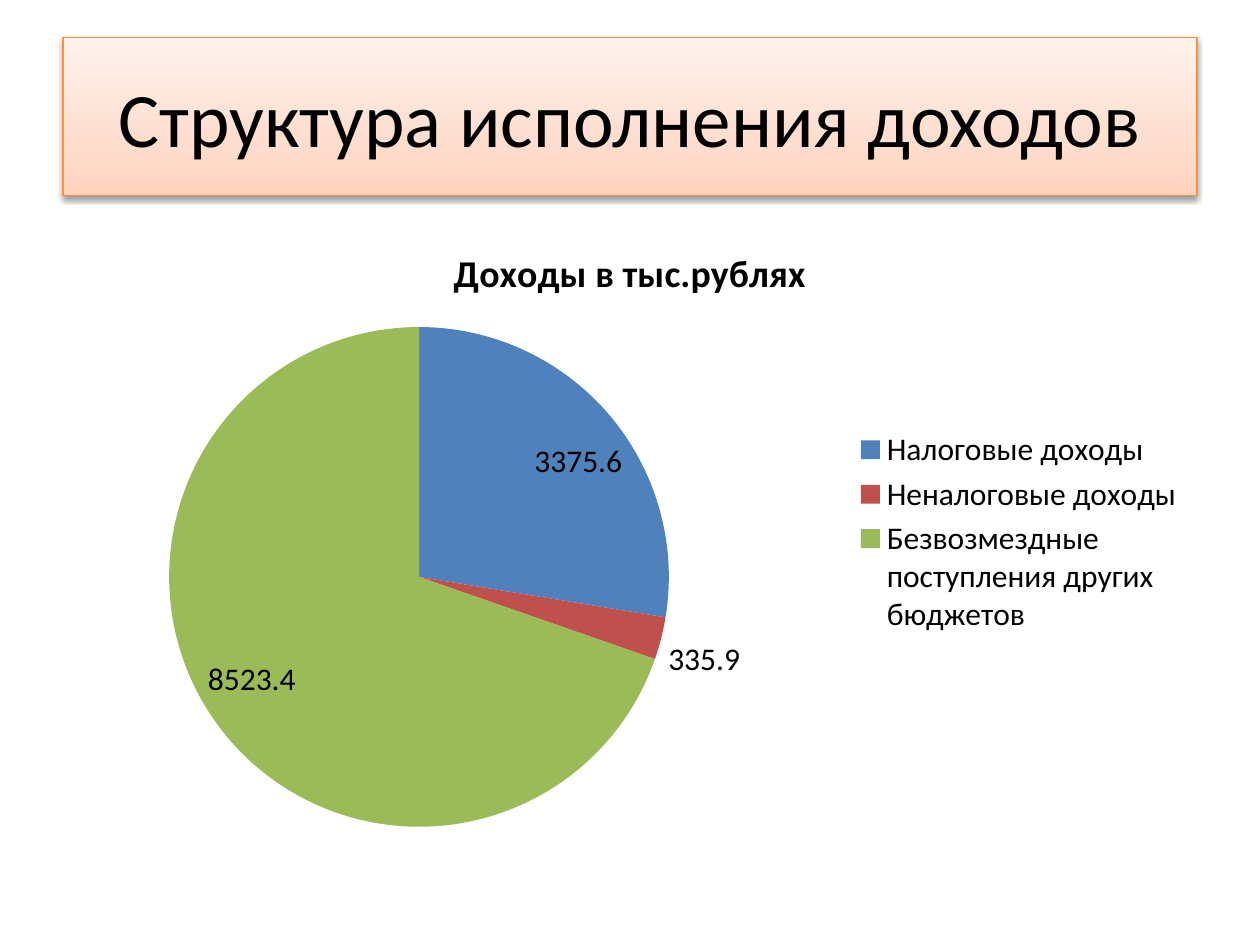
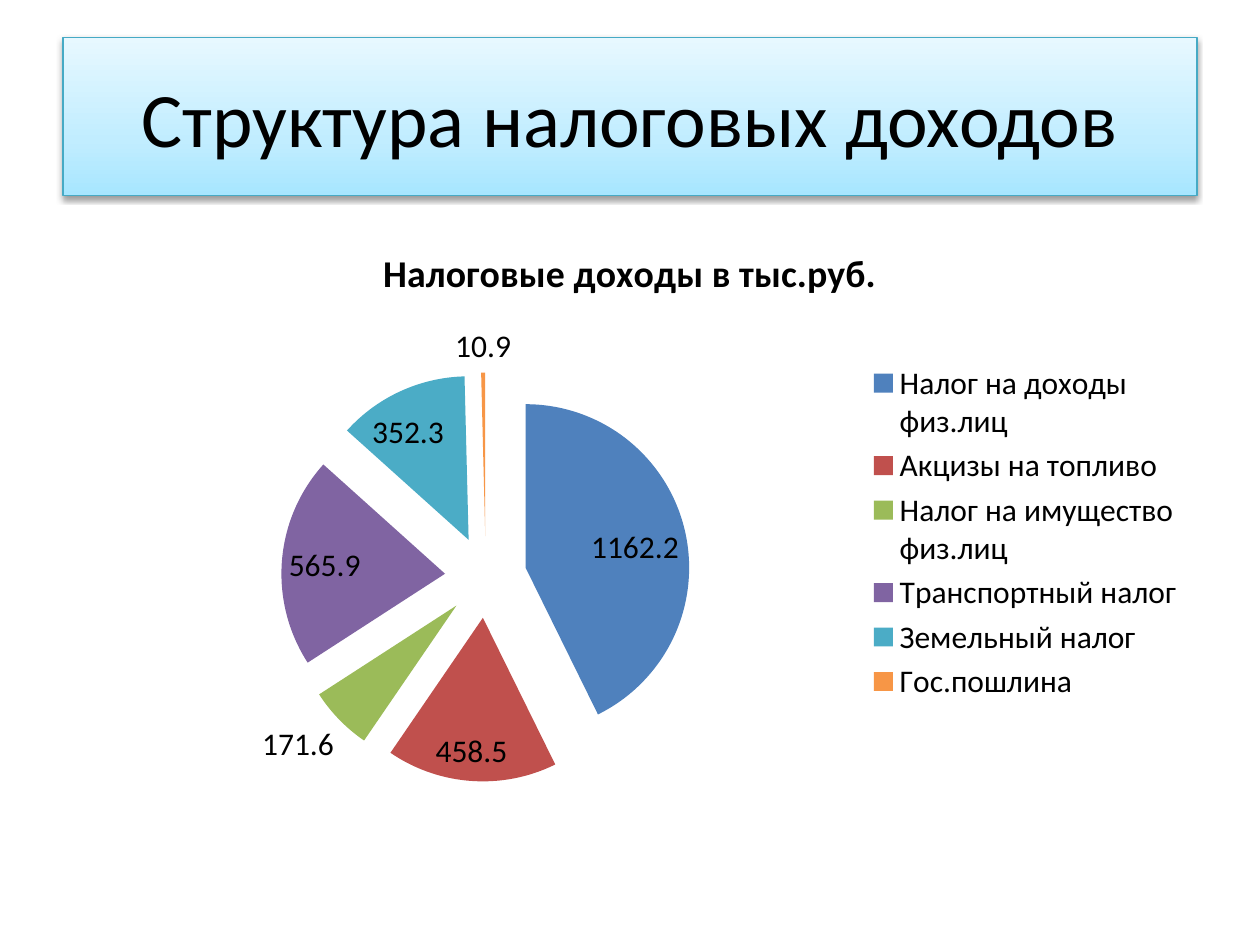
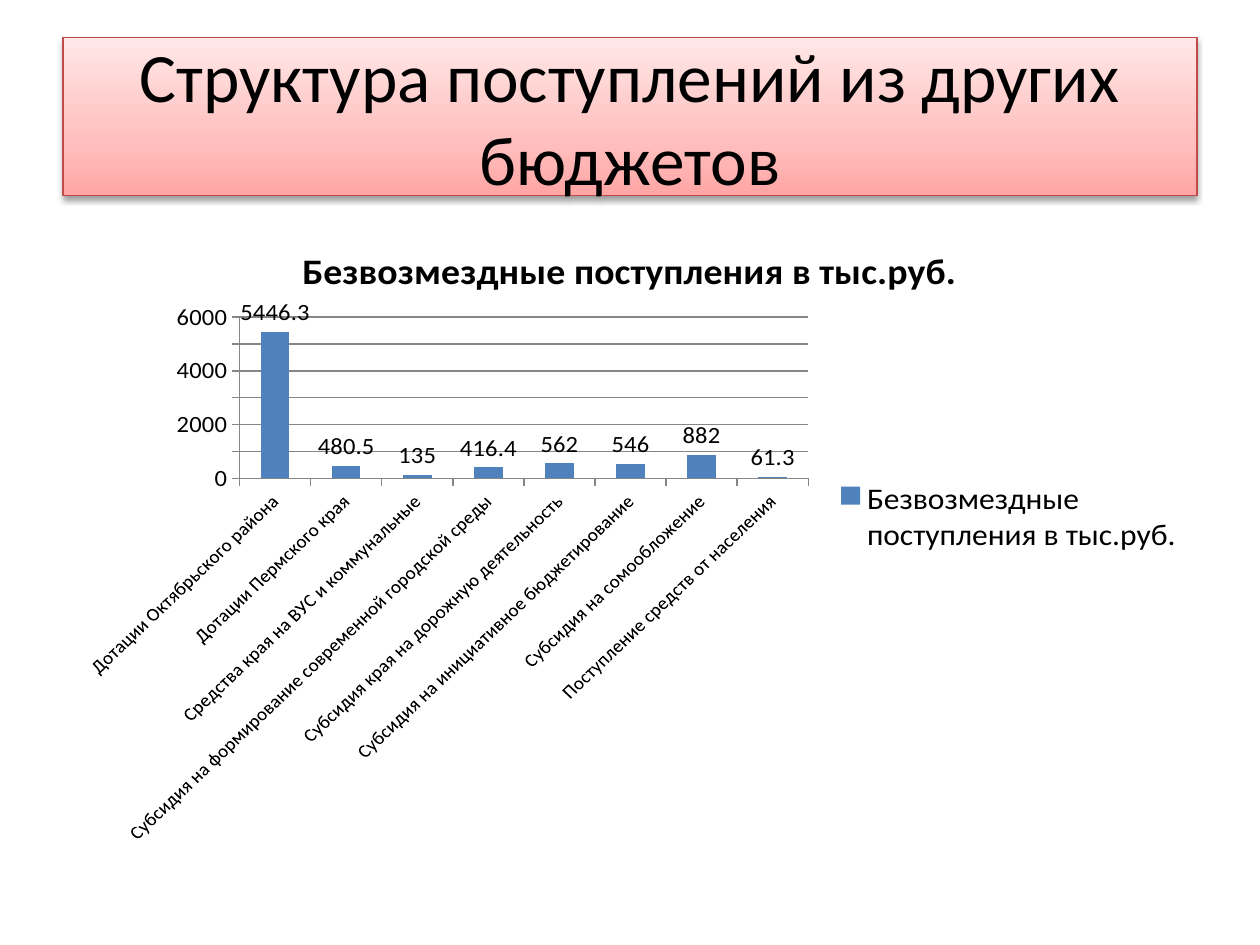
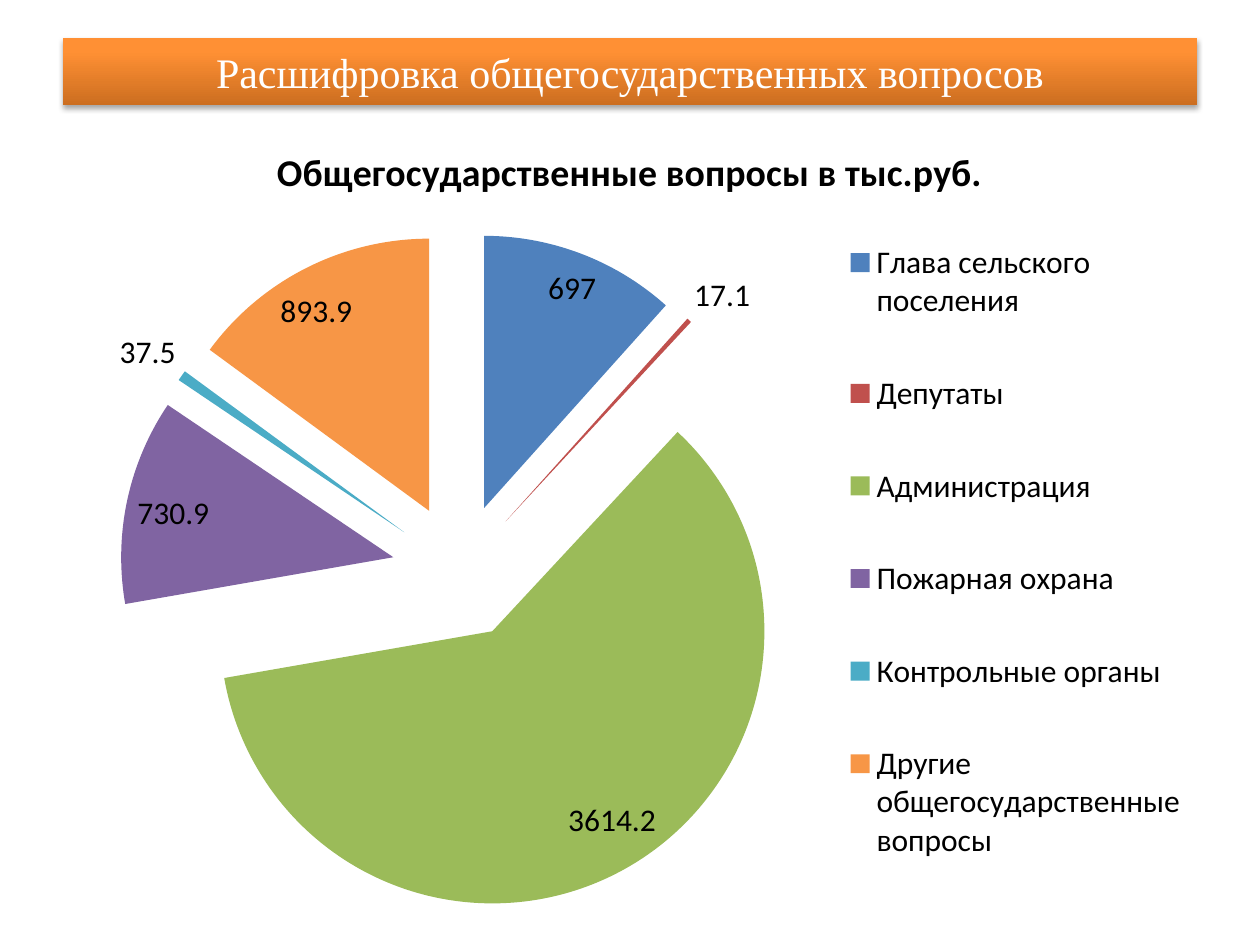
import lxml.etree
import pptx
import pptx.chart.data
import pptx.dml.color
import pptx.enum.chart
import pptx.enum.shapes
import pptx.enum.text
import pptx.oxml
import pptx.oxml.ns
import pptx.util
from copy import deepcopy

Pt = pptx.util.Pt
qn = pptx.oxml.ns.qn
LEFT, WIDTH = 36, 648
HUES = ["4F81BD", "C0504D", "9BBB59", "8064A2", "4BACC6", "F79646"]
BLACK, WHITE, GREY = "000000", "FFFFFF", "868686"


def color(code):
    return pptx.dml.color.RGBColor.from_string(code)


class Deck:
    """Holds the shared style and the current slide."""

    def __init__(self):
        self.show = pptx.Presentation()
        self.show.slide_width, self.show.slide_height = Pt(720), Pt(540)
        self.face = "Calibri"
        self.slide = None

    def page(self):
        self.slide = self.show.slides.add_slide(self.show.slide_layouts[6])

    def font(self, font, size, ink=BLACK, face=None, bold=None):
        font.name = face or self.face
        font.size = Pt(size)
        font.bold = bold
        font.color.rgb = color(ink)

    def blend(self, shape, stops):
        shape.fill.gradient()
        shape.fill.gradient_angle = 90
        group = shape._element.spPr.find(".//" + qn("a:gsLst"))
        group.append(deepcopy(group[-1]))
        for stop, (place, code) in zip(shape.fill.gradient_stops, stops):
            stop.position = place / 100
            stop.color.rgb = color(code)

    def shade(self, shape, alpha, gap):
        shape.shadow.inherit = False
        effects = shape._element.spPr.find(qn("a:effectLst"))
        drop = lxml.etree.SubElement(
            effects, qn("a:outerShdw"), blurRad=str(int(Pt(3.1))),
            dist=str(int(Pt(gap))), dir="5400000", rotWithShape="0")
        ink = lxml.etree.SubElement(drop, qn("a:srgbClr"), val=BLACK)
        lxml.etree.SubElement(ink, qn("a:alpha"), val=str(alpha * 1000))

    def band(self, text, stops, edge=None, size=44, high=90, ink=BLACK,
             face=None, alpha=38, gap=1.6):
        shape = self.slide.shapes.add_shape(
            pptx.enum.shapes.MSO_SHAPE.RECTANGLE,
            Pt(LEFT), Pt(21.6), Pt(WIDTH), Pt(high))
        self.blend(shape, stops)
        self.shade(shape, alpha, gap)
        if edge:
            shape.line.color.rgb = color(edge)
            shape.line.width = Pt(0.75)
        else:
            shape.line.fill.background()
        frame = shape.text_frame
        frame.word_wrap = True
        frame.vertical_anchor = pptx.enum.text.MSO_ANCHOR.MIDDLE
        para = frame.paragraphs[0]
        para.text = text
        para.alignment = pptx.enum.text.PP_ALIGN.CENTER
        self.font(para.font, size, ink, face)

    def chart(self, kind, title, rows, top, high):
        data = pptx.chart.data.CategoryChartData()
        data.categories = [name for name, _ in rows]
        data.add_series(title, [value for _, value in rows])
        chart = self.slide.shapes.add_chart(
            kind, Pt(LEFT), Pt(top), Pt(WIDTH), Pt(high), data).chart
        self.font(chart.font, 18)
        chart.has_title = True
        para = chart.chart_title.text_frame.paragraphs[0]
        para.text = title
        self.font(para.font, 21.6, bold=True)
        chart.chart_title.include_in_layout = False
        chart.has_legend = True
        chart.legend.position = pptx.enum.chart.XL_LEGEND_POSITION.RIGHT
        chart.legend.include_in_layout = False
        return chart

    def labels(self, plot, size, spot):
        plot.has_data_labels = True
        marks = plot.data_labels
        marks.show_value = True
        marks.position = spot
        self.font(marks.font, size)

    def settle(self, part, index, box, inner=False):
        for old in part.findall(qn("c:layout")):
            part.remove(old)
        layout = lxml.etree.Element(qn("c:layout"))
        manual = lxml.etree.SubElement(layout, qn("c:manualLayout"))
        pairs = [("layoutTarget", "inner")] if inner else []
        pairs += [("xMode", "edge"), ("yMode", "edge")]
        pairs += zip("xywh", map(str, box))
        for tag, value in pairs:
            lxml.etree.SubElement(manual, qn("c:" + tag), val=value)
        part.insert(index, layout)

    def pie(self, title, rows, top=126, high=356.4, burst=0,
            area=None, key=None):
        chart = self.chart(pptx.enum.chart.XL_CHART_TYPE.PIE,
                           title, rows, top, high)
        plot = chart.plots[0]
        plot.vary_by_categories = True
        self.labels(plot, 18, pptx.enum.chart.XL_LABEL_POSITION.BEST_FIT)
        series = plot.series[0]
        if burst:
            apart = lxml.etree.Element(qn("c:explosion"), val=str(burst))
            series._element.get_or_add_spPr().addnext(apart)
        for i, hue in enumerate(HUES[:len(rows)]):
            fill = series.points[i].format.fill
            fill.solid()
            fill.fore_color.rgb = color(hue)
        if area:
            self.settle(plot._element.getparent(), 0, area, True)
        if key:
            self.settle(chart.legend._element, 1, key)

    def bars(self, title, rows, top=126, high=356.4):
        chart = self.chart(pptx.enum.chart.XL_CHART_TYPE.COLUMN_CLUSTERED,
                           title, rows, top, high)
        plot = chart.plots[0]
        plot.vary_by_categories = False
        plot.gap_width = 150
        self.labels(plot, 14, pptx.enum.chart.XL_LABEL_POSITION.OUTSIDE_END)
        fill = plot.series[0].format.fill
        fill.solid()
        fill.fore_color.rgb = color(HUES[0])
        values = chart.value_axis
        values.has_major_gridlines = True
        for axis, size in ((chart.category_axis, 11), (values, 14)):
            self.font(axis.tick_labels.font, size)
            axis.major_tick_mark = pptx.enum.chart.XL_TICK_MARK.OUTSIDE
        for part in (chart.category_axis, values, values.major_gridlines):
            part.format.line.color.rgb = color(GREY)
            part.format.line.width = Pt(0.75)


def main():
    deck = Deck()

    deck.page()
    deck.band("Структура исполнения доходов",
              [(0, "FFD2BD"), (35, "FFDED0"), (100, "FFF2ED")], "F69240")
    deck.pie("Доходы в тыс.рублях", [
        ("Налоговые доходы", 3375.6),
        ("Неналоговые доходы", 335.9),
        ("Безвозмездные поступления других бюджетов", 8523.4)])

    deck.page()
    deck.band("Структура налоговых доходов",
              [(0, "A7E6FF"), (35, "C1EDFF"), (100, "E7F8FF")], "46AAC5")
    deck.pie("Налоговые доходы в тыс.руб.", [
        ("Налог на доходы физ.лиц", 1162.2),
        ("Акцизы на топливо", 458.5),
        ("Налог на имущество физ.лиц", 171.6),
        ("Транспортный налог", 565.9),
        ("Земельный налог", 352.3),
        ("Гос.пошлина", 10.9)], burst=25)

    deck.page()
    deck.band("Структура поступлений из других бюджетов",
              [(0, "FFA6A5"), (35, "FFC0BF"), (100, "FFE7E7")], "BF4C48",
              size=39.6)
    deck.bars("Безвозмездные поступления в тыс.руб.", [
        ("Дотации Октябрьского района", 5446.3),
        ("Дотации Пермского края", 480.5),
        ("Средства края на ВУС и коммунальные", 135),
        ("Субсидия на формирование современной городской среды", 416.4),
        ("Субсидия края на дорожную деятельность", 562),
        ("Субсидия на инициативное бюджетирование", 546),
        ("Субсидия на сомообложение", 882),
        ("Поступление средств от населения", 61.3)])

    deck.page()
    deck.band("Расшифровка общегосударственных вопросов",
              [(0, "CC6E20"), (80, "FF9034"), (100, "FF9136")], size=24,
              high=38.5, ink=WHITE, face="Times New Roman", alpha=35, gap=1.8)
    deck.pie("Общегосударственные вопросы в тыс.руб.", [
        ("Глава сельского поселения", 697),
        ("Депутаты", 17.1),
        ("Администрация", 3614.2),
        ("Пожарная охрана", 730.9),
        ("Контрольные органы", 37.5),
        ("Другие общегосударственные вопросы", 893.9)],
        top=66.2, high=465.1, burst=25,
        area=(0.05, 0.14, 0.6, 0.84), key=(0.68, 0.09, 0.32, 0.89))

    deck.show.save("out.pptx")


if __name__ == "__main__":
    main()
